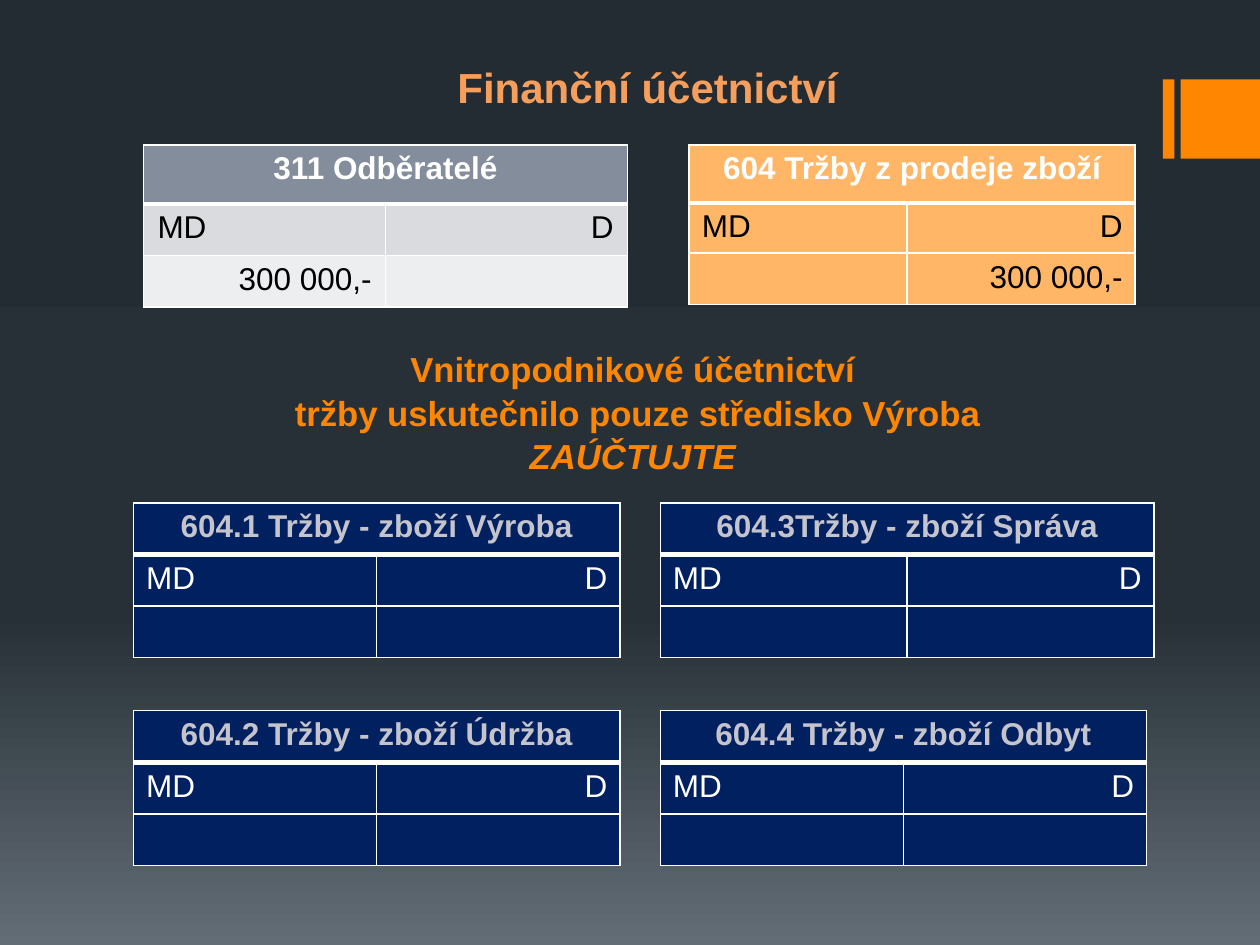
import copy

import pptx
import pptx.dml.color
import pptx.enum.shapes
import pptx.enum.text
import pptx.oxml
import pptx.oxml.ns
import pptx.util
from pptx.util import Inches

RGB = pptx.dml.color.RGBColor.from_string
ALIGN = pptx.enum.text.PP_ALIGN
ANCHOR = pptx.enum.text.MSO_ANCHOR
COLORS = {
    "orange": "FF8600", "peach": "F69E5C", "light orange": "FFB666",
    "slate": "838D9B", "gray": "D9DBDE", "pale gray": "EDEEEF",
    "navy": "002060", "silver": "C5C4CC", "white": "FFFFFF", "black": "000000",
}
BACKGROUND = [(0, "242C33"), (0.65, "273037"), (1, "636D76")]


def format_runs(paragraph, size, color, bold):
    for run in paragraph.runs:
        run.font.name = "Arial"
        run.font.size = pptx.util.Pt(size)
        run.font.bold = bold
        run.font.color.rgb = RGB(COLORS[color])


def set_borders(cell, top, bottom):
    properties = cell._tc.get_or_add_tcPr()
    widths = {"lnL": 1, "lnR": 1, "lnT": top, "lnB": bottom}
    for index, (side, width) in enumerate(widths.items()):
        line = pptx.oxml.parse_xml(
            f'<a:{side} {pptx.oxml.ns.nsdecls("a")} w="{pptx.util.Pt(width)}">'
            f'<a:solidFill><a:srgbClr val="{COLORS["white"]}"/></a:solidFill></a:{side}>')
        properties.insert(index, line)


presentation = pptx.Presentation()
presentation.slide_width, presentation.slide_height = Inches(10), Inches(7.5)
slide = presentation.slides.add_slide(presentation.slide_layouts[1])

# Background: three-stop gradient running downwards
fill = slide.background.fill
fill.gradient()
fill.gradient_angle = 270
first_stop = fill.gradient_stops[0]._gs
first_stop.addnext(copy.deepcopy(first_stop))
for stop, (position, color) in zip(fill.gradient_stops, BACKGROUND):
    stop.position = position
    stop.color.rgb = RGB(color)

# Orange blocks at the right edge
for left, width in [(9.23, 0.09), (9.37, 0.63)]:
    block = slide.shapes.add_shape(
        pptx.enum.shapes.MSO_SHAPE.RECTANGLE,
        Inches(left), Inches(0.63), Inches(width), Inches(0.63))
    block.shadow.inherit = False
    block.fill.solid()
    block.fill.fore_color.rgb = RGB(COLORS["orange"])
    block.line.fill.background()

# Title and upper heading
title, heading = slide.shapes.title, slide.placeholders[1]
title.text_frame.text = ("Vnitropodnikové účetnictví \v"
                         "tržby uskutečnilo pouze středisko Výroba\vZAÚČTUJTE ")
heading.text_frame.text = "Finanční účetnictví"
for shape, box, anchor, size, color in [
    (title, (1.06, 2.57, 8, 1.26), ANCHOR.BOTTOM, 19.8, "orange"),
    (heading, (0.51, 0.44, 9.21, 0.63), ANCHOR.TOP, 24, "peach"),
]:
    shape.left, shape.top, shape.width, shape.height = map(Inches, box)
    shape.text_frame.auto_size = pptx.enum.text.MSO_AUTO_SIZE.NONE
    shape.text_frame.vertical_anchor = anchor
    paragraph = shape.text_frame.paragraphs[0]
    paragraph.alignment = ALIGN.CENTER
    format_runs(paragraph, size, color, True)
title.text_frame.paragraphs[0].line_spacing = 1.04
title.text_frame.paragraphs[0].runs[-1].font.italic = True

heading_properties = heading.text_frame.paragraphs[0]._p.get_or_add_pPr()
heading_properties.set("marL", str(Inches(0.05)))
heading_properties.set("indent", "0")
heading_properties.append(
    pptx.oxml.parse_xml(f'<a:buNone {pptx.oxml.ns.nsdecls("a")}/>'))

# T-accounts: name, position, columns, rows, entries, row fills, header and text colours, side inset
gray_rows = ("slate", "gray", "pale gray")
orange_rows = ("light orange",) * 3
navy_rows = ("navy",) * 3
even_rows = (0.41,) * 3
accounts = [
    ("311 Odběratelé", 1.14, 1.15, (1.92, 1.92), (0.47, 0.41, 0.4),
     ("300 000,-", ""), gray_rows, "white", "black", 0.11),
    ("604 Tržby z prodeje zboží", 5.47, 1.15, (1.73, 1.81), (0.46, 0.4, 0.4),
     ("", "300 000,-"), orange_rows, "white", "black", 0.1),
]
for name, left, top, column in [
    ("604.1 Tržby - zboží Výroba", 1.06, 3.99, 1.93),
    ("604.3Tržby - zboží Správa", 5.24, 3.99, 1.96),
    ("604.2 Tržby - zboží Údržba", 1.06, 5.64, 1.93),
    ("604.4 Tržby - zboží Odbyt", 5.24, 5.64, 1.93),
]:
    accounts.append((name, left, top, (column, column), even_rows,
                     ("", ""), navy_rows, "silver", "white", 0.1))

for (name, left, top, columns, rows, entries, row_fills,
     header_color, text_color, inset) in accounts:
    table = slide.shapes.add_table(
        3, 2, Inches(left), Inches(top),
        Inches(sum(columns)), Inches(sum(rows))).table
    for column, width in zip(table.columns, columns):
        column.width = Inches(width)
    for row, height in zip(table.rows, rows):
        row.height = Inches(height)
    table.cell(0, 0).merge(table.cell(0, 1))

    for row_index, texts in enumerate([(name, ""), ("MD", "D"), entries]):
        is_header = row_index == 0
        for column_index, text in enumerate(texts):
            cell = table.cell(row_index, column_index)
            cell.fill.solid()
            cell.fill.fore_color.rgb = RGB(COLORS[row_fills[row_index]])
            cell.margin_left = cell.margin_right = Inches(inset)
            set_borders(cell, 3 if row_index == 1 else 1, 3 if is_header else 1)
            if not text:
                continue
            cell.text_frame.text = text
            paragraph = cell.text_frame.paragraphs[0]
            if is_header:
                paragraph.alignment = ALIGN.CENTER
            else:
                paragraph.alignment = ALIGN.LEFT if text == "MD" else ALIGN.RIGHT
            format_runs(paragraph, 18, header_color if is_header else text_color, is_header)

presentation.save("out.pptx")
